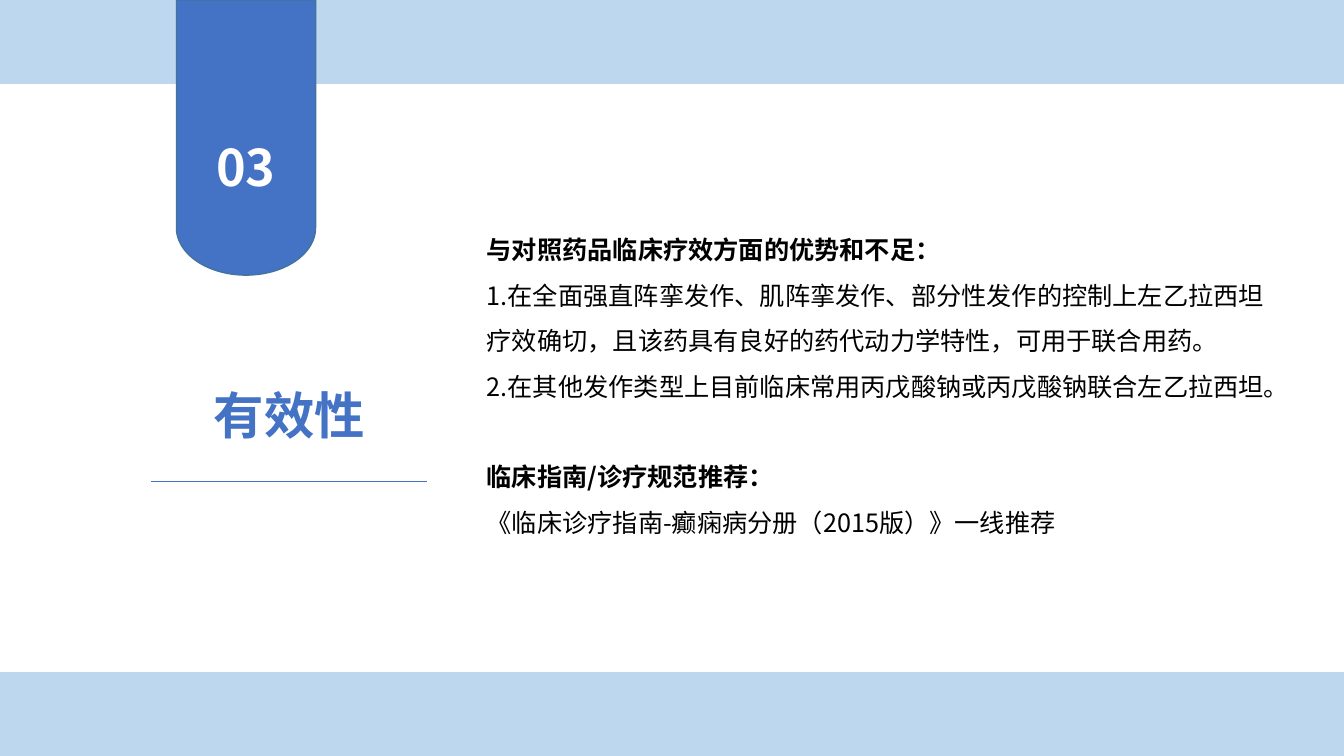
from math import cos, pi, sin

from lxml import etree
from pptx import Presentation
from pptx.dml.color import RGBColor
from pptx.enum.shapes import MSO_CONNECTOR as Connector, MSO_SHAPE as Shape
from pptx.enum.text import MSO_ANCHOR as Anchor, PP_ALIGN as Align
from pptx.oxml.ns import qn
from pptx.util import Inches, Pt

# Content
NUMBER = "03"
TITLE = "有效性"
SECTIONS = [
    ("与对照药品临床疗效方面的优势和不足：", [
        "1.在全面强直阵挛发作、肌阵挛发作、部分性发作的控制上左乙拉西坦疗效确切，且该药具有良好的药代动力学特性，可用于联合用药。",
        "2.在其他发作类型上目前临床常用丙戊酸钠或丙戊酸钠联合左乙拉西坦。",
    ]),
    ("临床指南/诊疗规范推荐：", ["《临床诊疗指南-癫痫病分册（2015版）》一线推荐"]),
]

THEME = {
    "band": RGBColor(0xBD, 0xD7, 0xEE),
    "accent": RGBColor(0x44, 0x72, 0xC4),
    "edge": RGBColor(0x43, 0x73, 0x9E),
    "white": RGBColor(0xFF, 0xFF, 0xFF),
    "text": RGBColor(0, 0, 0),
    "font": "Noto Sans CJK SC",
    "title_font": "Calibri",
    "large": Pt(36),
    "body": Pt(18),
    "section_gap": Pt(32.4),
}
WIDTH, HEIGHT, BAND = 13.33, 7.5, 0.83


def paint(shape, fill, line):
    shape.shadow.inherit = False
    shape.fill.solid()
    shape.fill.fore_color.rgb = fill
    shape.line.color.rgb = line
    shape.line.width = Pt(1)


def style(para, size, color, bold, font=THEME["font"]):
    for span in para.runs:
        span.font.size, span.font.bold, span.font.name = size, bold, font
        span.font.color.rgb = color
        east_asian = etree.SubElement(span.font._element, qn("a:ea"))
        east_asian.set("typeface", THEME["font"])


def place(shape, left, top, width, height):
    shape.left, shape.top = Inches(left), Inches(top)
    shape.width, shape.height = Inches(width), Inches(height)


deck = Presentation()
deck.slide_width, deck.slide_height = Inches(WIDTH), Inches(HEIGHT)
page = deck.slides.add_slide(deck.slide_layouts[5])
shapes = page.shapes

# Bands along the top and bottom edges
for top in (0, HEIGHT - BAND):
    band = shapes.add_shape(Shape.RECTANGLE, 0, Inches(top), Inches(WIDTH), Inches(BAND))
    paint(band, THEME["band"], THEME["band"])

# Hanging banner with an elliptical lower end
LEFT, RIGHT, SHOULDER, DROP, STEPS = 1.75, 3.13, 2.26, 0.47, 48
radius = (RIGHT - LEFT) / 2
arc = [(LEFT + radius + radius * cos(pi * i / STEPS), SHOULDER + DROP * sin(pi * i / STEPS))
       for i in range(STEPS + 1)]
outline = [(Inches(x), Inches(y)) for x, y in [(RIGHT, 0)] + arc]
builder = shapes.build_freeform(Inches(LEFT), 0)
builder.add_line_segments(outline, close=True)
paint(builder.convert_to_shape(), THEME["accent"], THEME["edge"])

# Section number
number = shapes.add_textbox(Inches(2.01), Inches(1.3), Inches(0.86), Inches(0.71))
number.text_frame.text = NUMBER
number.text_frame.word_wrap = True
number.text_frame.vertical_anchor = Anchor.MIDDLE
para = number.text_frame.paragraphs[0]
para.alignment = Align.CENTER
style(para, THEME["large"], THEME["white"], True)

# Title with its rule; no side margins, so that it keeps to one line
title = shapes.title
place(title, 2.02, 3.76, 1.7, 0.71)
title.text_frame.text = TITLE
title.text_frame.word_wrap = True
title.text_frame.margin_left = title.text_frame.margin_right = 0
title.text_frame.vertical_anchor = Anchor.TOP
para = title.text_frame.paragraphs[0]
para.alignment = Align.CENTER
style(para, THEME["large"], THEME["accent"], True, THEME["title_font"])

rule = shapes.add_connector(Connector.STRAIGHT, Inches(1.5), Inches(4.78), Inches(4.24), Inches(4.78))
rule.line.color.rgb = THEME["accent"]
rule.line.width = Pt(0.5)
etree.SubElement(rule._element.spPr, qn("a:effectLst"))

# Findings
box = shapes.add_textbox(Inches(4.73), Inches(2.13), Inches(7.97), Inches(3.28))
frame = box.text_frame
frame.word_wrap = True
lines = [(text, i == 0, section > 0 and i == 0)
         for section, (heading, items) in enumerate(SECTIONS)
         for i, text in enumerate([heading] + items)]
for index, (text, is_heading, starts_gap) in enumerate(lines):
    para = frame.add_paragraph() if index else frame.paragraphs[0]
    para.text = text
    para.line_spacing = 1.5
    if starts_gap:
        para.space_before = THEME["section_gap"]
    style(para, THEME["body"], THEME["text"], is_heading)

deck.save("out.pptx")
